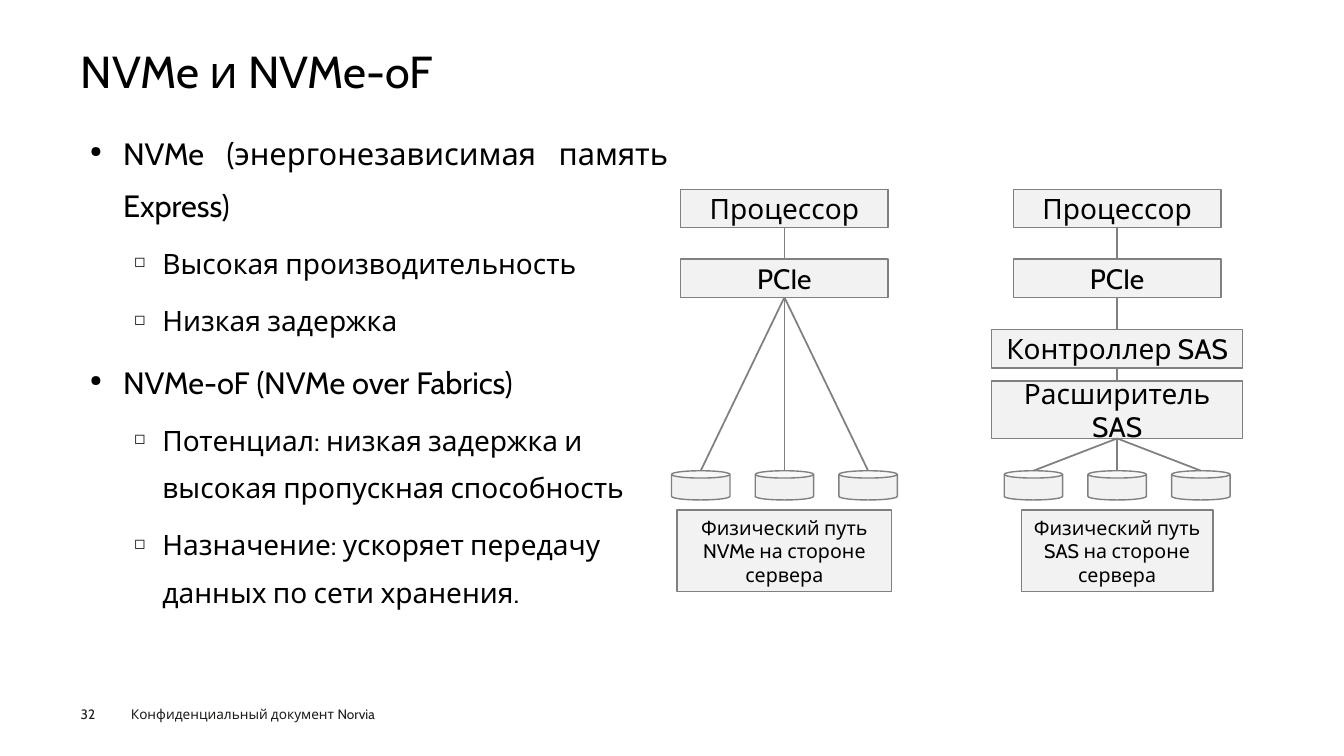
from lxml import etree
from pptx import Presentation, util as u
from pptx.dml.color import RGBColor
from pptx.enum import shapes, text
from pptx.oxml import ns

COLORS = {"text": "000000", "footer": "1D1D1B", "fill": "F2F2F2", "line": "808080"}
FONT = "Cabin"
CENTER = text.PP_ALIGN.CENTER

presentation = Presentation()
presentation.slide_width, presentation.slide_height = u.Inches(13.33), u.Inches(7.5)
slide = presentation.slides.add_slide(presentation.slide_layouts[6])


def add_text(box, content, size, color="text", margins=(0.1, 0.05)):
    """Fill a text box or shape, one paragraph per line, and return its paragraphs."""
    frame = box.text_frame
    frame.word_wrap = True
    frame.margin_left = frame.margin_right = u.Inches(margins[0])
    frame.margin_top = frame.margin_bottom = u.Inches(margins[1])
    frame.text = content
    for paragraph in frame.paragraphs:
        for run in paragraph.runs:
            run.font.size = u.Pt(size)
            run.font.name = FONT
            run.font.color.rgb = RGBColor.from_string(COLORS[color])
    return frame.paragraphs


def add_node(kind, center, top, width, height):
    """Add a grey outlined shape centred on a column."""
    shape = slide.shapes.add_shape(kind, *map(u.Inches, (center - width / 2, top, width, height)))
    shape.shadow.inherit = False
    shape.fill.solid()
    shape.fill.fore_color.rgb = RGBColor.from_string(COLORS["fill"])
    shape.line.color.rgb = RGBColor.from_string(COLORS["line"])
    shape.line.width = u.Pt(1)
    return shape


# Title and footer
labels = [
    ("Конфиденциальный документ Norvia", (1.2, 6.95, 3.44, 0.26), 9.7, "footer", (0.1, 0.05)),
    ("32", (0.8, 7, 0.55, 0.16), 9.7, "footer", (0, 0)),
    ("NVMe и NVMe-oF", (0.8, 0.49, 11.73, 0.54), 32, "text", (0, 0)),
]
for content, place, size, color, margins in labels:
    box = slide.shapes.add_textbox(*map(u.Inches, place))
    paragraphs = add_text(box, content, size, color, margins)
paragraphs[0].line_spacing = 0.9

# Bulleted list
bullets = [
    (0, "NVMe (энергонезависимая память Express)"),
    (1, "Высокая производительность"),
    (1, "Низкая задержка"),
    (0, "NVMe-oF (NVMe over Fabrics)"),
    (1, "Потенциал: низкая задержка и высокая пропускная способность"),
    (1, "Назначение: ускоряет передачу данных по сети хранения."),
]
# Per level: symbol, left indent, hanging indent, space before, text size
level_styles = [("●", 0.33, 0.33, 7.9, 22), ("◻", 0.72, 0.28, 7.2, 20)]
body = slide.shapes.add_textbox(*map(u.Inches, (0.8, 1.15, 5.92, 5.33)))
paragraphs = add_text(body, "\n".join(content for _, content in bullets), 20, margins=(0.09, 0.04))
for index, (paragraph, (level, _)) in enumerate(zip(paragraphs, bullets)):
    symbol, indent, hanging, space, size = level_styles[level]
    properties = paragraph._p.get_or_add_pPr()
    properties.set("marL", str(u.Inches(indent)))
    properties.set("indent", str(-u.Inches(hanging)))
    etree.SubElement(properties, ns.qn("a:buSzPct")).set("val", "50000")
    etree.SubElement(properties, ns.qn("a:buChar")).set("char", symbol)
    paragraph.level = level
    paragraph.line_spacing = 1.4
    paragraph.space_before = u.Pt(space if index else 0)
    paragraph.alignment = text.PP_ALIGN.LEFT if level else text.PP_ALIGN.JUSTIFY
    paragraph.runs[0].font.size = u.Pt(size)

# Two data paths: column centre, stacked boxes (label, row top, width, height), caption
DISK_TOP, DISK_STEP = 4.67, 0.83
common = [("Процессор", 1.88, 2.06, 0.38), ("PCIe", 2.57, 2.06, 0.38)]
sas = [("Контроллер SAS", 3.27, 2.49, 0.38), ("Расширитель SAS", 3.78, 2.49, 0.57)]
data_paths = [
    (7.78, common, "Физический путь NVMe на стороне сервера", 2.13),
    (11.08, common + sas, "Физический путь SAS на стороне сервера", 1.9),
]
for center, stack, caption, caption_width in data_paths:
    links = []
    bottom = None
    boxes = [(*box, 20) for box in stack] + [(caption, 5.06, caption_width, 0.81, 14)]
    for label, top, width, height, size in boxes:
        shape = add_node(shapes.MSO_SHAPE.RECTANGLE, center, top, width, height)
        shape.text_frame.vertical_anchor = text.MSO_ANCHOR.MIDDLE
        add_text(shape, label, size)[0].alignment = CENTER
        if label != caption:
            if bottom:
                links.append((center, bottom, center, top))
            bottom = top + height
    for column in (-1, 0, 1):
        disk_center = center + column * DISK_STEP
        add_node(shapes.MSO_SHAPE.CAN, disk_center, DISK_TOP, 0.58, 0.29)
        links.append((center, bottom, disk_center, DISK_TOP))
    for link in links:
        connector = slide.shapes.add_connector(shapes.MSO_CONNECTOR.STRAIGHT, *map(u.Inches, link))
        connector.line.color.rgb = RGBColor.from_string(COLORS["line"])
        connector.line.width = u.Pt(1.25)
        etree.SubElement(connector._element.spPr, ns.qn("a:effectLst"))

presentation.save("out.pptx")
